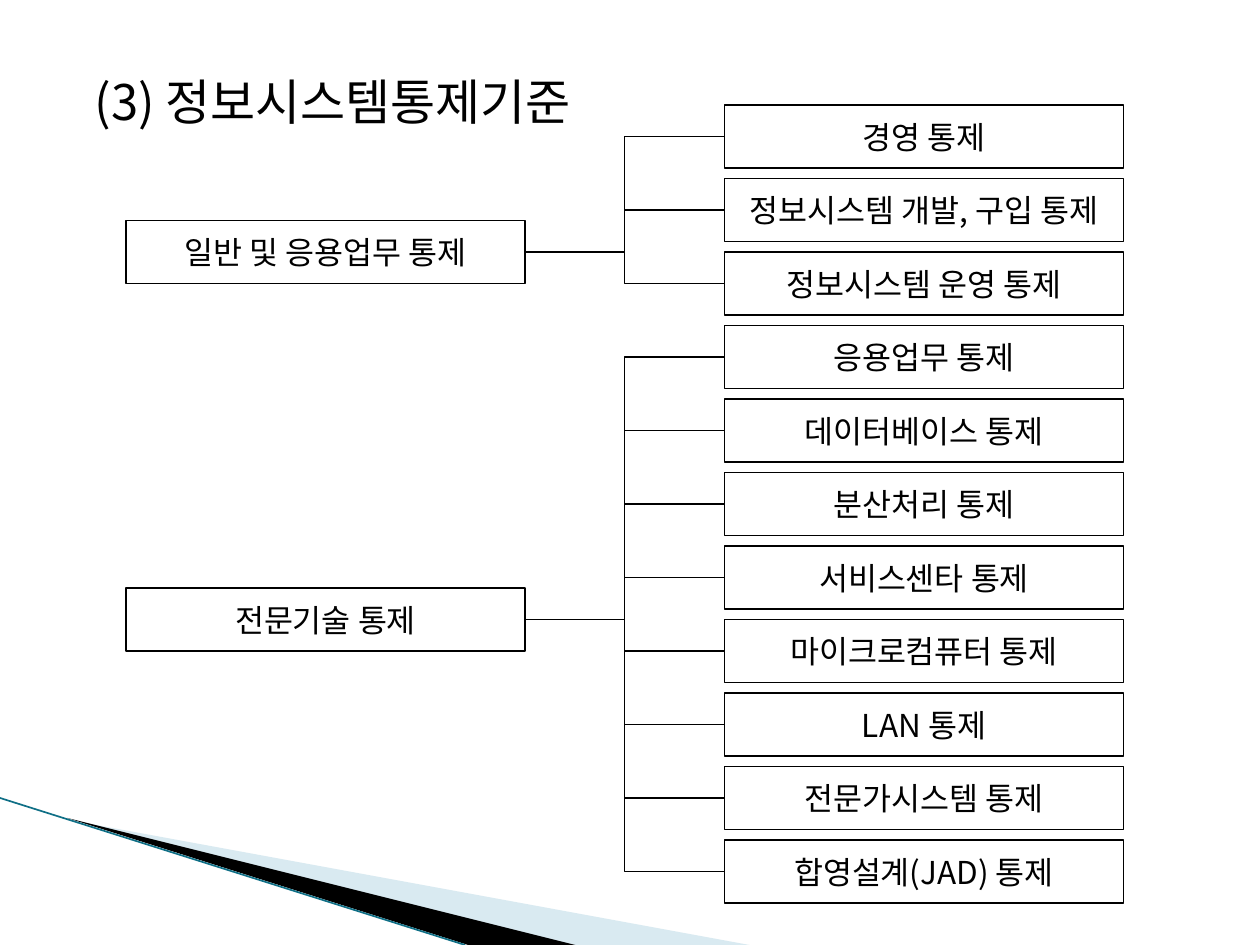
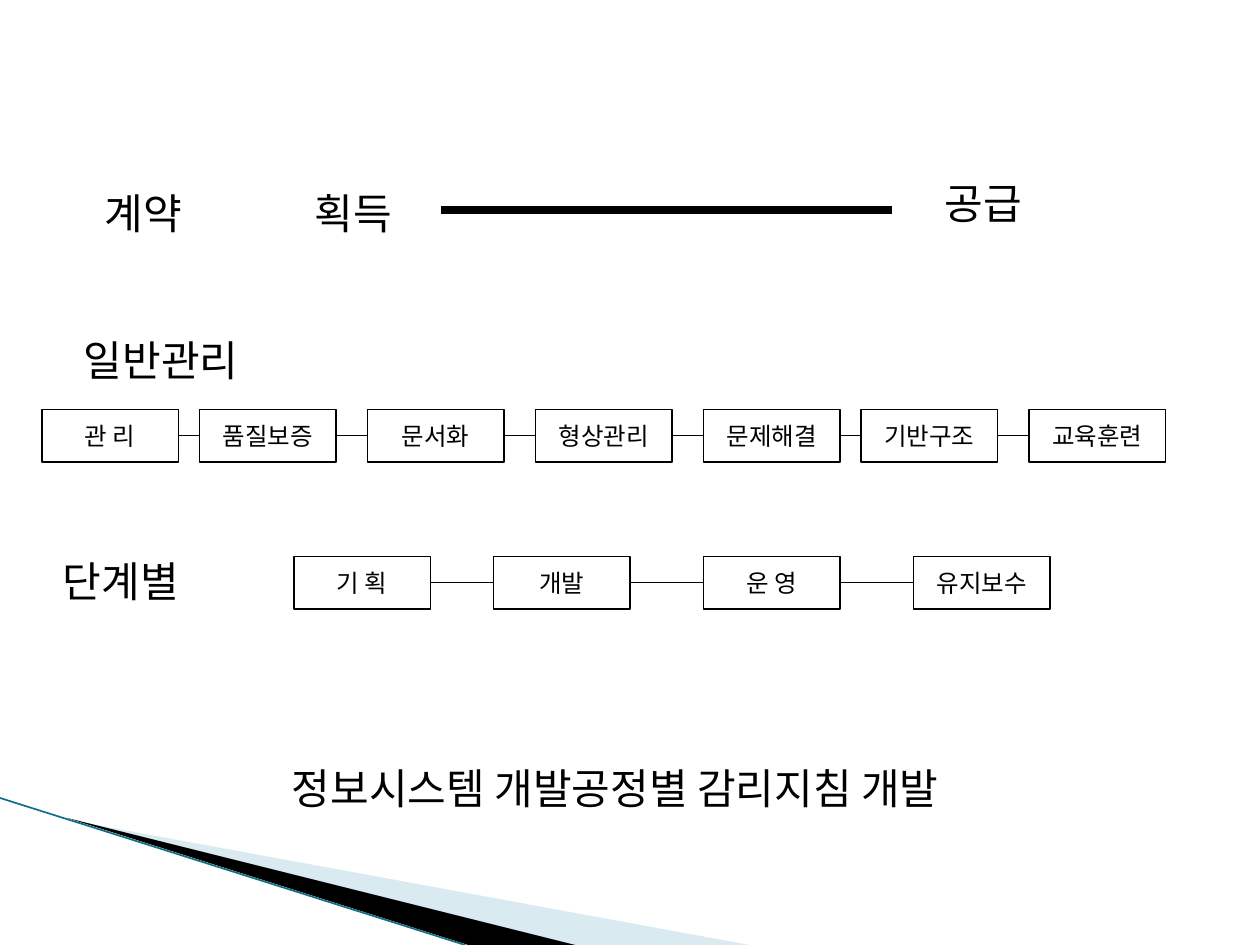
from dataclasses import dataclass

from lxml import etree
from pptx import Presentation
from pptx.dml.color import RGBColor
from pptx.enum.shapes import MSO_CONNECTOR, MSO_SHAPE
from pptx.enum.text import MSO_ANCHOR, MSO_AUTO_SIZE, PP_ALIGN
from pptx.oxml.ns import qn
from pptx.util import Emu, Inches, Pt

RECT = MSO_SHAPE.RECTANGLE
STRAIGHT, ELBOW = MSO_CONNECTOR.STRAIGHT, MSO_CONNECTOR.ELBOW
TOP, MIDDLE = MSO_ANCHOR.TOP, MSO_ANCHOR.MIDDLE
LEFT, CENTER = PP_ALIGN.LEFT, PP_ALIGN.CENTER
FIXED = MSO_AUTO_SIZE.NONE
LEFT_SIDE, RIGHT_SIDE = 1, 3
TITLE_ONLY = 5

WIDE, HIGH = Inches(10), Inches(7.5)
COLS, ROWS = 120, 90


@dataclass(frozen=True)
class Theme:
    font: str = "Noto Sans CJK KR"
    ink: str = "000000"
    paper: str = "FFFFFF"
    pale: str = "A0CBDC"
    teal: str = "0F6F86"
    title: int = 28
    head: int = 24
    node: int = 18
    step: int = 14
    thin: float = 0.75
    edge: float = 0.95
    thick: float = 4.25


@dataclass(frozen=True)
class Area:
    """A rectangle in grid columns and rows."""
    col: float
    row: float
    wide: float
    high: float

    def box(self) -> tuple:
        return (col(self.col), row(self.row), col(self.wide), row(self.high))


@dataclass(frozen=True)
class Label:
    text: str
    area: Area


@dataclass(frozen=True)
class Band:
    points: tuple
    color: str
    alpha: int


@dataclass(frozen=True)
class Group:
    """A control group and the controls that hang from it."""
    name: str
    row: float
    leaves: tuple


@dataclass(frozen=True)
class Chain:
    """A row of linked steps, each with its starting column."""
    row: float
    steps: tuple


THEME = Theme()

BANDS = (
    Band(((6.6, 78.1), (71.4, 90), (54.7, 90)), THEME.pale, 40),
    Band(((6.4, 77.9), (54.8, 90), (44.6, 90)), THEME.ink, 100),
)

GROUPS = (
    Group("일반 및 응용업무 통제", 21,
          ("경영 통제", "정보시스템 개발, 구입 통제", "정보시스템 운영 통제")),
    Group("전문기술 통제", 56,
          ("응용업무 통제", "데이터베이스 통제", "분산처리 통제", "서비스센타 통제",
           "마이크로컴퓨터 통제", "LAN 통제", "전문가시스템 통제", "합영설계(JAD) 통제")),
)
GROUP_COL, LEAF_COL = 12, 69
NODE_WIDE, NODE_HIGH = 38, 6
LEAF_TOP, LEAF_STEP = 10, 7

CHAINS = (
    Chain(39, (("관 리", 4), ("품질보증", 19), ("문서화", 35), ("형상관리", 51),
               ("문제해결", 67), ("기반구조", 82), ("교육훈련", 98))),
    Chain(53, (("기 획", 28), ("개발", 47), ("운 영", 67), ("유지보수", 87))),
)
STEP_WIDE, STEP_HIGH = 13, 5

HEADS = (
    Label("계약", Area(8.8, 17.3, 10.4, 6)),
    Label("획득", Area(28.8, 17.3, 10.4, 6)),
    Label("공급", Area(88.8, 16.3, 10.4, 6)),
    Label("일반관리", Area(6.8, 31.3, 18.4, 6)),
    Label("단계별", Area(4.8, 52.3, 14.4, 6)),
)


def col(count: float) -> Emu:
    return Emu(round(WIDE * count / COLS))


def row(count: float) -> Emu:
    return Emu(round(HIGH * count / ROWS))


def rgb(color: str) -> RGBColor:
    return RGBColor.from_string(color)


def write(frame, text: str, size: int, align=LEFT, anchor=TOP) -> None:
    frame.word_wrap = False
    frame.auto_size = FIXED
    frame.vertical_anchor = anchor
    para = frame.paragraphs[0]
    para.alignment = align
    run = para.add_run()
    run.text = text
    run.font.size = Pt(size)
    run.font.name = THEME.font
    run.font.color.rgb = rgb(THEME.ink)
    etree.SubElement(run.font._element, qn("a:ea"), typeface=THEME.font)


def add_title(slide, label: Label, size: int) -> None:
    title = slide.shapes.title
    title.left, title.top, title.width, title.height = label.area.box()
    write(title.text_frame, label.text, size)


def add_head(slide, label: Label) -> None:
    box = slide.shapes.add_textbox(*label.area.box())
    write(box.text_frame, label.text, THEME.head)


def add_node(slide, label: Label, size: int):
    node = slide.shapes.add_shape(RECT, *label.area.box())
    node.shadow.inherit = False
    node.fill.solid()
    node.fill.fore_color.rgb = rgb(THEME.paper)
    node.line.color.rgb = rgb(THEME.ink)
    node.line.width = Pt(THEME.thin)
    write(node.text_frame, label.text, size, CENTER, MIDDLE)
    return node


def add_line(slide, start: tuple, end: tuple, width: float,
             color: str = THEME.ink, kind=STRAIGHT):
    line = slide.shapes.add_connector(
        kind, col(start[0]), row(start[1]), col(end[0]), row(end[1]))
    line.line.color.rgb = rgb(color)
    line.line.width = Pt(width)
    etree.SubElement(line.element.spPr, qn("a:effectLst"))
    return line


def join(slide, first, second, kind=STRAIGHT) -> None:
    """Link the right side of one node to the left side of the next."""
    line = add_line(slide, (0, 0), (1, 1), THEME.thin, kind=kind)
    line.begin_connect(first, RIGHT_SIDE)
    line.end_connect(second, LEFT_SIDE)


def add_band(slide, band: Band):
    spots = [(col(x), row(y)) for x, y in band.points]
    pen = slide.shapes.build_freeform(*spots[0])
    pen.add_line_segments(spots[1:], close=True)
    shape = pen.convert_to_shape()
    shape.shadow.inherit = False
    shape.fill.solid()
    shape.fill.fore_color.rgb = rgb(band.color)
    shape.line.fill.background()
    if band.alpha < 100:
        tint = shape.element.spPr.find(".//" + qn("a:srgbClr"))
        etree.SubElement(tint, qn("a:alpha"), val=str(band.alpha * 1000))
    return shape


def dress_master(deck, slide) -> None:
    """Draw the corner bands, then move them to the slide master."""
    decor = [add_band(slide, band) for band in BANDS]
    decor.append(add_line(slide, (0, 76), (44.3, 90), THEME.edge, THEME.teal))
    for shape in decor:
        deck.slide_master.shapes.element.append(shape.element)


def draw_tree(slide) -> None:
    add_title(slide, Label("(3) 정보시스템통제기준", Area(7.8, 6.2, 52.2, 6.8)),
              THEME.title)
    top = LEAF_TOP
    for group in GROUPS:
        area = Area(GROUP_COL, group.row, NODE_WIDE, NODE_HIGH)
        root = add_node(slide, Label(group.name, area), THEME.node)
        for name in group.leaves:
            area = Area(LEAF_COL, top, NODE_WIDE, NODE_HIGH)
            leaf = add_node(slide, Label(name, area), THEME.node)
            join(slide, root, leaf, ELBOW)
            top += LEAF_STEP


def draw_flow(slide) -> None:
    add_title(slide, Label("정보시스템 개발공정별 감리지침 개발",
                           Area(26.6, 72, 70.4, 6)), THEME.head)
    for head in HEADS:
        add_head(slide, head)
    add_line(slide, (42, 20), (85, 20), THEME.thick)
    for chain in CHAINS:
        nodes = [
            add_node(slide, Label(name, Area(start, chain.row, STEP_WIDE, STEP_HIGH)),
                     THEME.step)
            for name, start in chain.steps
        ]
        for first, second in zip(nodes, nodes[1:]):
            join(slide, first, second)


def main() -> None:
    deck = Presentation()
    deck.slide_width, deck.slide_height = WIDE, HIGH
    layout = deck.slide_layouts[TITLE_ONLY]
    tree, flow = (deck.slides.add_slide(layout) for _ in range(2))
    dress_master(deck, tree)
    draw_tree(tree)
    draw_flow(flow)
    deck.save("out.pptx")


if __name__ == "__main__":
    main()
